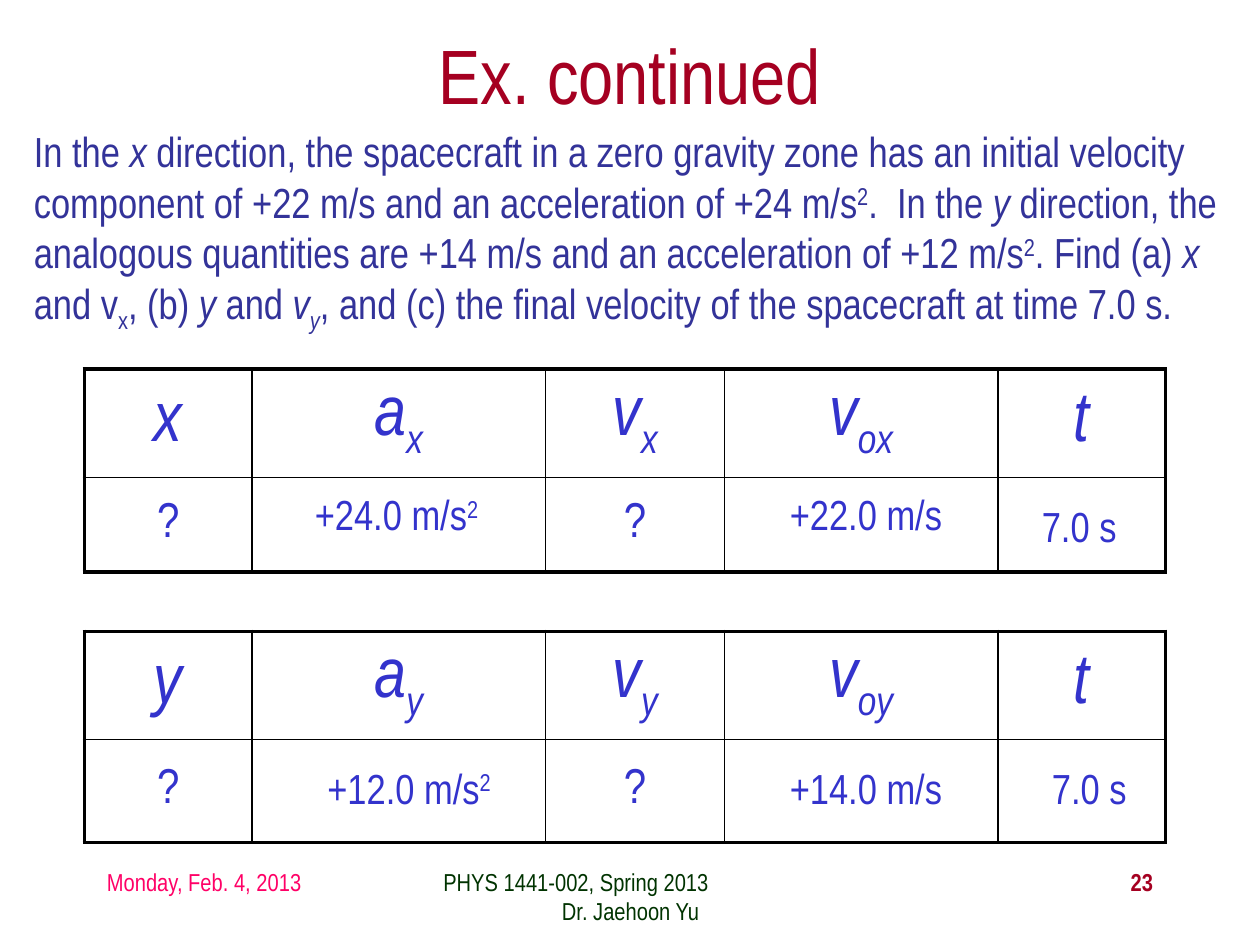
from typing import NamedTuple

from lxml.etree import SubElement
from pptx import Presentation
from pptx.dml.color import RGBColor
from pptx.enum.text import MSO_ANCHOR, MSO_AUTO_SIZE, PP_ALIGN
from pptx.oxml.ns import qn
from pptx.util import Inches, Pt

FONT = "Arial Narrow"
BLUE, NAVY, RED = "3333CC", "333399", "A50021"
PINK, GREEN, BLACK = "FF0066", "003300", "000000"
SUP, SUB = 30, -25
COLUMNS = (1.33, 2.33, 1.42, 2.17, 1.33)


class Run(NamedTuple):
    text: str
    italic: bool = False
    baseline: int = 0


class Box(NamedTuple):
    left: float
    top: float
    width: float
    height: float


class Label(NamedTuple):
    box: Box
    runs: list[Run]
    size: int = 24
    color: str = BLUE
    align: PP_ALIGN = PP_ALIGN.LEFT
    bold: bool = False
    wrap: bool = False


class Motion(NamedTuple):
    """One axis of the motion, shown as a table of known and unknown quantities."""
    axis: str
    top: float
    rows: tuple[float, float]


def rgb(color: str) -> RGBColor:
    return RGBColor.from_string(color)


def write(p, runs: list[Run], size: int, color: str,
          align: PP_ALIGN = PP_ALIGN.LEFT, bold: bool = False) -> None:
    p.alignment = align
    p.font.name, p.font.size, p.font.bold = FONT, Pt(size), bold
    p.font.color.rgb = rgb(color)
    for run in runs:
        r = p.add_run()
        r.text = run.text
        # Runs carry the face too, so it also holds over placeholder styles
        r.font.name, r.font.size, r.font.bold = FONT, Pt(size), bold
        r.font.color.rgb = rgb(color)
        r.font.italic = run.italic
        if run.baseline:
            r._r.get_or_add_rPr().set("baseline", str(run.baseline * 1000))


def add_label(slide, label: Label):
    tf = slide.shapes.add_textbox(*map(Inches, label.box)).text_frame
    tf.word_wrap = label.wrap
    write(tf.paragraphs[0], label.runs, label.size, label.color, label.align, label.bold)
    return tf


def set_borders(cell, row: int, col: int) -> None:
    """Thick lines on the outside of the two-row table, thin lines inside."""
    outer = {"L": col == 0, "R": col == len(COLUMNS) - 1, "T": row == 0, "B": row == 1}
    tcPr = cell._tc.get_or_add_tcPr()
    for side, is_outer in outer.items():
        ln = SubElement(tcPr, qn(f"a:ln{side}"), w=str(Pt(2.25 if is_outer else 1)))
        fill = SubElement(ln, qn("a:solidFill"))
        SubElement(fill, qn("a:srgbClr"), val=BLACK)


def add_motion_table(slide, motion: Motion) -> None:
    axis = motion.axis
    symbols = [[Run(axis, True)]]
    symbols += [[Run(name, True), Run(sub + axis, True, SUB)]
                for name, sub in (("a", ""), ("v", ""), ("v", "o"))]
    symbols.append([Run("t", True)])
    unknown = [Run("?")]
    contents = [symbols, [unknown, None, unknown, None, None]]

    table = slide.shapes.add_table(2, len(COLUMNS), Inches(0.67), Inches(motion.top),
                                   Inches(sum(COLUMNS)), Inches(sum(motion.rows))).table
    table.first_row = table.horz_banding = False
    for column, width in zip(table.columns, COLUMNS):
        column.width = Inches(width)
    for i, height in enumerate(motion.rows):
        table.rows[i].height = Inches(height)
        for j, runs in enumerate(contents[i]):
            cell = table.cell(i, j)
            set_borders(cell, i, j)
            cell.fill.background()
            cell.vertical_anchor = MSO_ANCHOR.MIDDLE
            if runs:
                write(cell.text_frame.paragraphs[0], runs, 28 if i else 40,
                      BLUE, PP_ALIGN.CENTER)


PROBLEM = [
    Run("In the"), Run(" x", True),
    Run(" direction, the spacecraft in a zero gravity zone has an initial velocity "
        "component of +22 m/s and an acceleration of +24 m/s"),
    Run("2", baseline=SUP), Run(".  In the "), Run("y", True),
    Run(" direction, the analogous quantities are +14 m/s and an acceleration of +12 m/s"),
    Run("2", baseline=SUP), Run(". Find (a) "), Run("x", True),
    Run(" and v"), Run("x", baseline=SUB), Run(", (b) "), Run("y", True),
    Run(" and "), Run("v", True), Run("y", True, SUB),
    Run(", and (c) the final velocity of the spacecraft at time 7.0 s."),
]

MOTIONS = [Motion("x", 2.93, (0.82, 0.75)), Motion("y", 5.01, (0.83, 0.82))]

SQUARED = Run("2", baseline=SUP)
VALUES = [
    Label(Box(2.4, 3.83, 1.51, 0.5), [Run("+24.0 m/s"), SQUARED]),
    Label(Box(6.17, 3.83, 1.41, 0.5), [Run("+22.0 m/s")]),
    Label(Box(8.17, 3.92, 0.8, 0.5), [Run("7.0 s")]),
    Label(Box(2.5, 6, 1.51, 0.5), [Run("+12.0 m/s"), SQUARED]),
    Label(Box(6.17, 6, 1.41, 0.5), [Run("+14.0 m/s")]),
    Label(Box(8.25, 6, 0.8, 0.5), [Run("7.0 s")]),
]

DATE = Label(Box(0.75, 6.83, 2.08, 0.5), [Run("Monday, Feb. 4, 2013")], 14, PINK, wrap=True)
COURSE = Label(Box(3.42, 6.83, 3.17, 0.5), [Run("PHYS 1441-002, Spring 2013")],
               14, GREEN, wrap=True)
NUMBER = Label(Box(7.17, 6.83, 2.08, 0.5), [Run("23")], 14, RED,
               PP_ALIGN.RIGHT, bold=True, wrap=True)


def add_title(slide, text: str) -> None:
    title = slide.shapes.title
    title.left, title.top, title.width, title.height = map(Inches, Box(0.75, 0.17, 8.5, 0.83))
    tf = title.text_frame
    tf.auto_size = MSO_AUTO_SIZE.NONE
    tf.vertical_anchor = MSO_ANCHOR.MIDDLE
    write(tf.paragraphs[0], [Run(text)], 44, RED, PP_ALIGN.CENTER)


def main() -> None:
    prs = Presentation()
    prs.slide_width, prs.slide_height = Inches(10), Inches(7.5)
    slide = prs.slides.add_slide(prs.slide_layouts[5])

    add_title(slide, "Ex. continued")
    add_label(slide, Label(Box(0.17, 0.95, 9.67, 1.72), PROBLEM, color=NAVY, wrap=True))
    for motion in MOTIONS:
        add_motion_table(slide, motion)
    for value in VALUES:
        add_label(slide, value)

    add_label(slide, DATE)
    course = add_label(slide, COURSE)
    write(course.add_paragraph(), [Run("Dr. Jaehoon Yu")], 14, GREEN, PP_ALIGN.CENTER)
    add_label(slide, NUMBER)
    prs.save("out.pptx")


if __name__ == "__main__":
    main()
